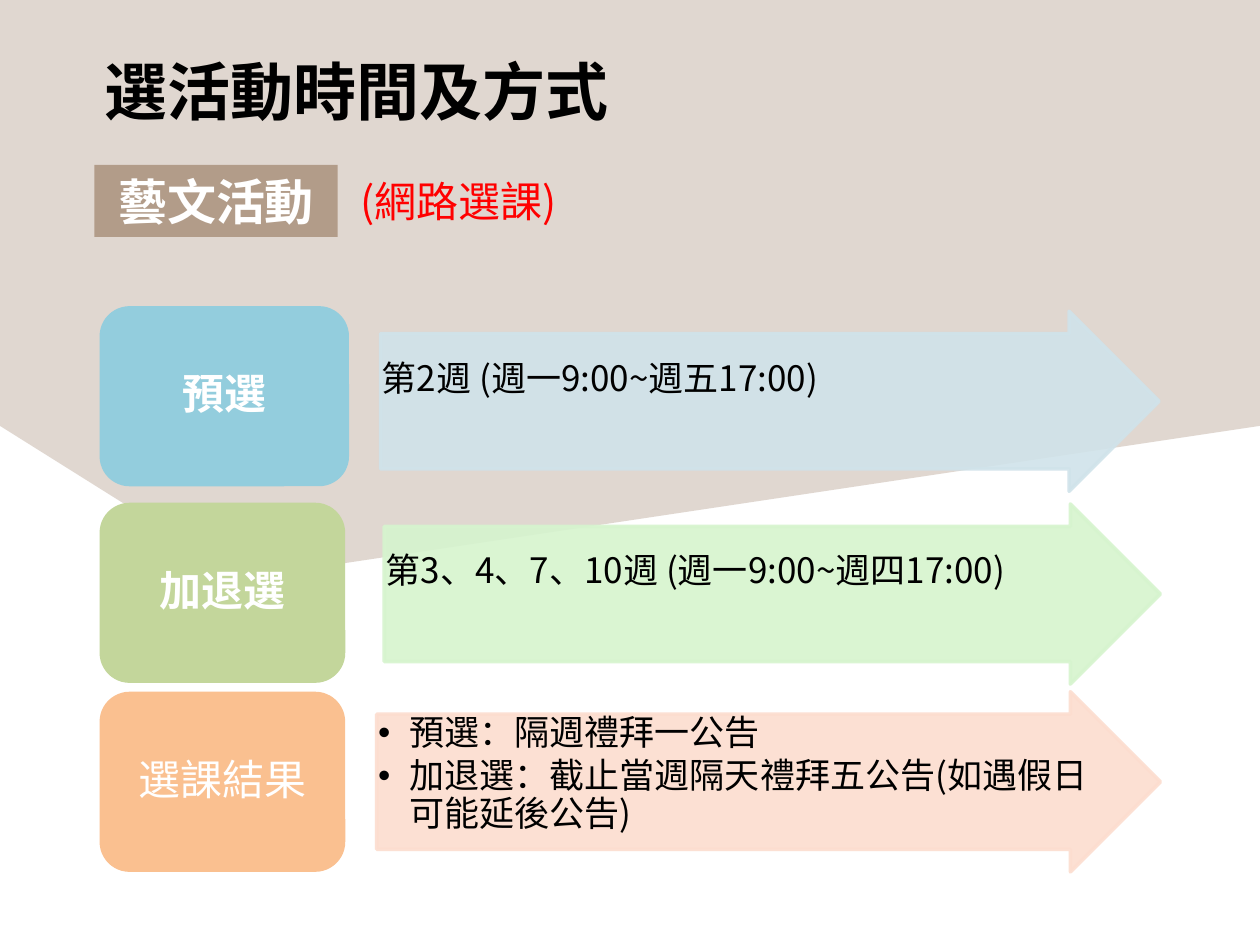
from lxml.etree import SubElement
from pptx import Presentation
from pptx.dml.color import RGBColor
from pptx.enum.shapes import MSO_SHAPE
from pptx.enum.text import MSO_ANCHOR, PP_ALIGN
from pptx.oxml.ns import qn
from pptx.util import Inches, Pt

FONT = "Noto Sans CJK SC"
BLACK = RGBColor(0x00, 0x00, 0x00)
WHITE = RGBColor(0xFF, 0xFF, 0xFF)
RED = RGBColor(0xFF, 0x00, 0x00)
SAND = RGBColor(0xD9, 0xCE, 0xC5)
BROWN = RGBColor(0xB2, 0x9C, 0x89)
BLUE = RGBColor(0x93, 0xCD, 0xDD)
PALE_BLUE = RGBColor(0xD0, 0xE3, 0xEA)
GREEN = RGBColor(0xC3, 0xD6, 0x9B)
PALE_GREEN = RGBColor(0xD6, 0xF4, 0xCE)
ORANGE = RGBColor(0xFA, 0xC0, 0x90)
PALE_ORANGE = RGBColor(0xFC, 0xDD, 0xCF)


def paint(shape, color, opacity=100, line_width=0):
    shape.shadow.inherit = False
    shape.fill.solid()
    shape.fill.fore_color.rgb = color
    if line_width:
        shape.line.width = Pt(line_width)
        shape.line.color.rgb = color
    else:
        shape.line.fill.background()
    if opacity < 100:
        for tint in shape._element.spPr.iter(qn("a:srgbClr")):
            SubElement(tint, qn("a:alpha"), val=str(opacity * 1000))


def write(para, text, size, color, bold=False):
    para.text = text
    span = para.runs[0]
    span.font.size = Pt(size)
    span.font.bold = bold
    span.font.name = FONT
    span.font.color.rgb = color
    SubElement(span.font._element, qn("a:ea"), typeface=FONT)


deck = Presentation()
deck.slide_width = Inches(10)
deck.slide_height = Inches(7.5)
page = deck.slides.add_slide(deck.slide_layouts[6])
shapes = page.shapes

outline = shapes.build_freeform(0, 0, scale=Inches(1) / 100)
outline.add_line_segments([(1000, 0), (1000, 338), (193, 459), (0, 338)], close=True)
paint(outline.convert_to_shape(), SAND, opacity=80)

tag = shapes.add_shape(MSO_SHAPE.RECTANGLE, Inches(0.75), Inches(1.31), Inches(1.93), Inches(0.57))
paint(tag, BROWN)
para = tag.text_frame.paragraphs[0]
para.alignment = PP_ALIGN.CENTER
write(para, "藝文活動", 28, WHITE, bold=True)

steps = [
    ("預選", True, BLUE, PALE_BLUE, 2.43, 1.98, 2.47, 3.02, 6.18, 1.5, "",
     ["第2週 (週一9:00~週五17:00)"]),
    ("加退選", True, GREEN, PALE_GREEN, 3.99, 1.95, 4, 3.05, 6.16, 1.5, "",
     ["第3、4、7、10週 (週一9:00~週四17:00)"]),
    ("選課結果", False, ORANGE, PALE_ORANGE, 5.49, 1.95, 5.49, 2.99, 6.22, 0.9, "•",
     ["預選：隔週禮拜一公告", "加退選：截止當週隔天禮拜五公告(如遇假日可能延後公告)"]),
]
for (name, bold, color, pale, label_top, label_width,
     arrow_top, arrow_left, arrow_width, spacing, bullet, lines) in steps:
    arrow = shapes.add_shape(MSO_SHAPE.RIGHT_ARROW, Inches(arrow_left), Inches(arrow_top),
                             Inches(arrow_width), Inches(1.43))
    arrow.adjustments[0] = 0.75
    arrow.adjustments[1] = 0.5
    paint(arrow, pale, opacity=90, line_width=2)

    box = shapes.add_textbox(Inches(arrow_left), Inches(arrow_top + 0.18),
                             Inches(arrow_width - 0.54), Inches(1.07))
    frame = box.text_frame
    frame.word_wrap = True
    frame.margin_left = frame.margin_right = Inches(0.01)
    frame.margin_top = frame.margin_bottom = Inches(0.01)
    for index, line in enumerate(lines):
        para = frame.add_paragraph() if index else frame.paragraphs[0]
        para.level = 1
        para.line_spacing = spacing
        para.space_after = Pt(3)
        properties = para._p.get_or_add_pPr()
        properties.set("marL", str(Inches(0.25)))
        properties.set("indent", str(-Inches(0.25)))
        if bullet:
            SubElement(properties, qn("a:buFont"), typeface="Arial")
            SubElement(properties, qn("a:buChar"), char=bullet)
        write(para, line, 20, BLACK)

    label = shapes.add_shape(MSO_SHAPE.ROUNDED_RECTANGLE, Inches(0.79), Inches(label_top),
                             Inches(label_width), Inches(1.43))
    paint(label, color)
    label.text_frame.vertical_anchor = MSO_ANCHOR.MIDDLE
    para = label.text_frame.paragraphs[0]
    para.alignment = PP_ALIGN.CENTER
    para.line_spacing = 0.9
    write(para, name, 24, WHITE, bold)

method = shapes.add_textbox(Inches(2.76), Inches(1.34), Inches(2.99), Inches(0.5))
method.text_frame.word_wrap = True
write(method.text_frame.paragraphs[0], "(網路選課)", 24, RED)

title = shapes.add_textbox(Inches(0.73), Inches(0.37), Inches(4.24), Inches(0.71))
title.text_frame.word_wrap = False
write(title.text_frame.paragraphs[0], "選活動時間及方式", 36, BLACK, bold=True)

deck.save("out.pptx")
